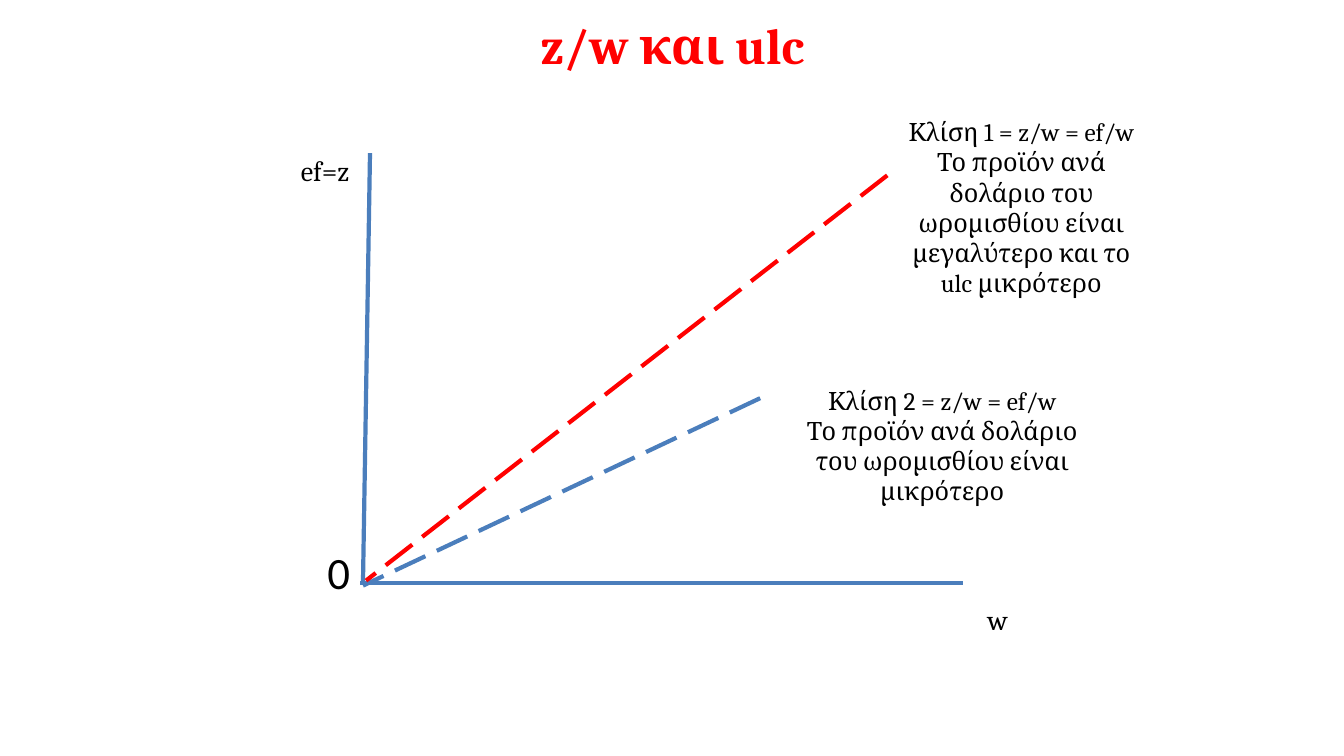
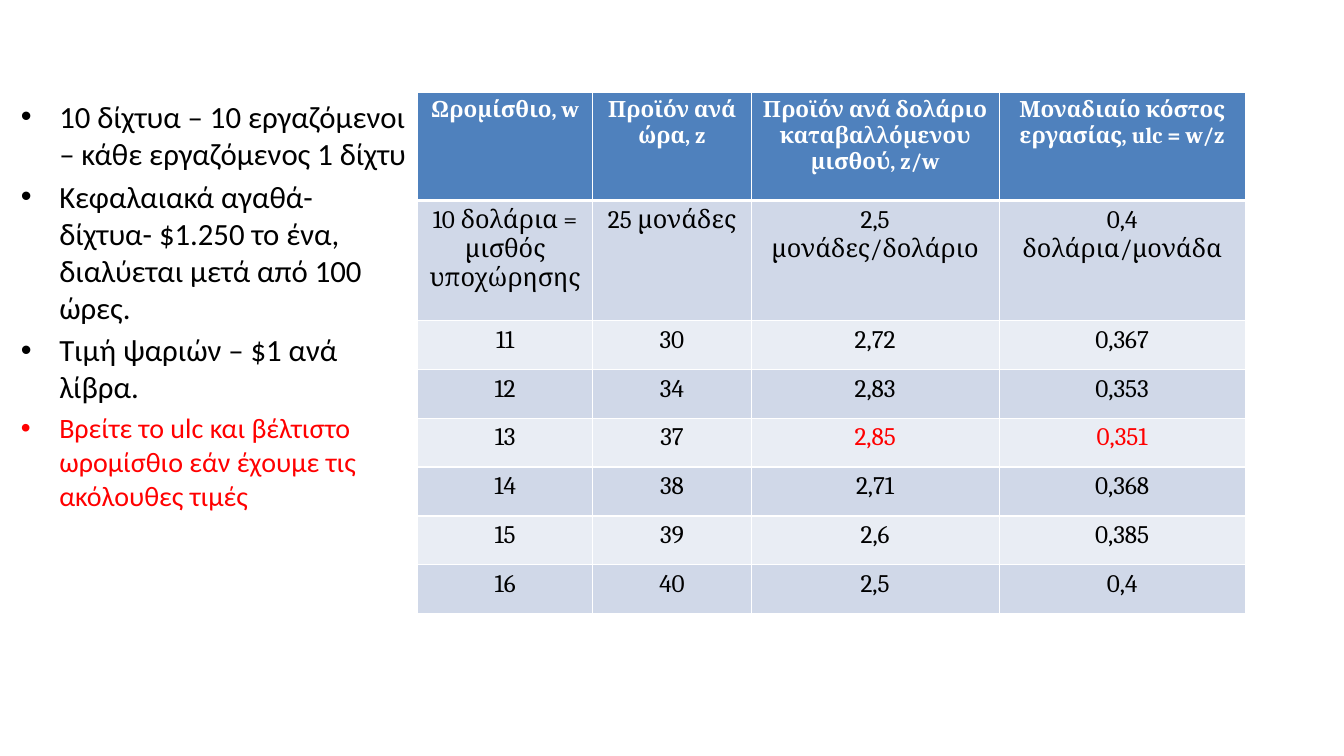
import pptx
import pptx.dml.color
import pptx.enum.dml
import pptx.enum.shapes
import pptx.enum.text
import pptx.oxml
import pptx.oxml.ns
import pptx.util

Inches = pptx.util.Inches
Pt = pptx.util.Pt
CENTER = pptx.enum.text.PP_ALIGN.CENTER
LEFT = pptx.enum.text.PP_ALIGN.LEFT
MIDDLE = pptx.enum.text.MSO_ANCHOR.MIDDLE
TOP = pptx.enum.text.MSO_ANCHOR.TOP
DASH = pptx.enum.dml.MSO_LINE.LONG_DASH
NAMESPACE = pptx.oxml.ns.nsdecls("a")

BLACK, WHITE, RED = "000000", "FFFFFF", "FF0000"
AXIS_BLUE, HEADER_BLUE = "4B7EBC", "4F81BD"
BANDS = ("D0D8E8", "E9EDF4")

TITLE = {"name": "Cambria", "size": Pt(36), "bold": True, "color": RED}
AXIS = {"name": "Cambria", "size": Pt(20), "color": BLACK}
ORIGIN = {"name": "Calibri", "size": Pt(32), "color": BLACK}
NOTE = {"name": "Cambria", "size": Pt(18), "color": BLACK}
HEADER = {"name": "Cambria", "size": Pt(16), "bold": True, "color": WHITE}
CELL = {**NOTE, "bold": False}
BULLET = {"name": "Calibri", "size": Pt(22), "color": BLACK}
TASK = {**BULLET, "size": Pt(20), "color": RED}

HEADINGS = [
    ((2.17, 0.13, 9, 0.63), "z/w και ulc", TITLE),
    ((3.1, 5.37, 0.52, 0.6), "0", ORIGIN),
]

LABELS = [
    ((2.81, 1.52, 0.83, 0.34), ["ef=z"], AXIS),
    ((9.58, 5.95, 0.63, 0.39), ["w"], AXIS),
    ((8.87, 1.15, 2.52, 1.81), [
        "Κλίση 1 = z/w = ef/w",
        "Το προϊόν ανά δολάριο του ωρομισθίου είναι μεγαλύτερο και το ulc μικρότερο",
    ], NOTE),
    ((7.85, 3.83, 2.99, 1.18), [
        "Κλίση 2 = z/w = ef/w",
        "Το προϊόν ανά δολάριο του ωρομισθίου είναι μικρότερο",
    ], NOTE),
]

LINES = [
    ((3.67, 1.52), (3.6, 5.78), AXIS_BLUE, None),
    ((9.55, 5.78), (3.57, 5.78), AXIS_BLUE, None),
    ((7.54, 3.95), (3.6, 5.81), AXIS_BLUE, DASH),
    ((8.8, 1.74), (3.63, 5.76), RED, DASH),
]

BULLETS = [
    ("10 δίχτυα – 10 εργαζόμενοι – κάθε εργαζόμενος 1 δίχτυ", BULLET),
    ("Κεφαλαιακά αγαθά- δίχτυα- $1.250 το ένα, διαλύεται μετά από 100 ώρες.", BULLET),
    ("Τιμή ψαριών – $1 ανά λίβρα.", BULLET),
    ("Βρείτε το ulc και βέλτιστο ωρομίσθιο εάν έχουμε τις ακόλουθες τιμές", TASK),
]

COLUMNS = [1.74, 1.57, 2.46, 2.44]
HEIGHTS = [1.07, 1.19] + [2.91 / 6] * 6
ROWS = [
    ["Ωρομίσθιο, w", "Προϊόν ανά ώρα, z",
     "Προϊόν ανά δολάριο καταβαλλόμενου μισθού, z/w",
     "Μοναδιαίο κόστος εργασίας, ulc = w/z"],
    ["10 δολάρια = μισθός υποχώρησης", "25 μονάδες",
     "2,5 μονάδες/δολάριο", "0,4 δολάρια/μονάδα"],
    ["11", "30", "2,72", "0,367"],
    ["12", "34", "2,83", "0,353"],
    ["13", "37", "2,85", "0,351"],
    ["14", "38", "2,71", "0,368"],
    ["15", "39", "2,6", "0,385"],
    ["16", "40", "2,5", "0,4"],
]
BEST_VALUES = {"2,85", "0,351"}


def color(value):
    return pptx.dml.color.RGBColor.from_string(value)


def apply_format(font, values):
    for name, value in values.items():
        if name == "color":
            font.color.rgb = color(value)
        else:
            setattr(font, name, value)


def add_span(para, text, values, align=CENTER):
    para.alignment = align
    span = para.add_run()
    span.text = text
    apply_format(span.font, values)


def add_paragraphs(frame, count):
    return [frame.paragraphs[0]] + [frame.add_paragraph() for _ in range(count - 1)]


def add_box(page, place, anchor):
    frame = page.shapes.add_textbox(*map(Inches, place)).text_frame
    frame.word_wrap = True
    frame.vertical_anchor = anchor
    return frame


def add_heading(page, place, text, values):
    frame = add_box(page, place, MIDDLE)
    add_span(frame.paragraphs[0], text, values)


def add_label(page, place, texts, values):
    label = page.shapes.add_shape(
        pptx.enum.shapes.MSO_SHAPE.RECTANGLE, *map(Inches, place))
    label.shadow.inherit = False
    label.fill.solid()
    label.fill.fore_color.rgb = color(WHITE)
    label.line.fill.background()
    frame = label.text_frame
    frame.word_wrap = True
    frame.vertical_anchor = MIDDLE
    for para, text in zip(add_paragraphs(frame, len(texts)), texts):
        add_span(para, text, values)


def add_line(page, start, end, line_color, dash):
    line = page.shapes.add_connector(
        pptx.enum.shapes.MSO_CONNECTOR.STRAIGHT, *map(Inches, start + end))
    line.line.color.rgb = color(line_color)
    line.line.width = Pt(3)
    if dash:
        line.line.dash_style = dash
    line._element.spPr.append(pptx.oxml.parse_xml(f"<a:effectLst {NAMESPACE}/>"))


def add_bullets(page, place, items):
    frame = add_box(page, place, TOP)
    paras = add_paragraphs(frame, len(items))
    for para, (text, values) in zip(paras, items):
        properties = para._p.get_or_add_pPr()
        properties.set("marL", str(Inches(0.38)))
        properties.set("indent", str(-Inches(0.38)))
        for tag in ('buFont %s typeface="Arial"', 'buChar %s char="•"'):
            properties.append(pptx.oxml.parse_xml(f"<a:{tag % NAMESPACE}/>"))
        add_span(para, text, values, LEFT)
    for para in paras[1:]:
        para.space_before = Pt(4.2)


def add_borders(cell, bottom_width):
    properties = cell._tc.get_or_add_tcPr()
    widths = {"lnL": 1, "lnR": 1, "lnT": 1, "lnB": bottom_width}
    for index, (tag, width) in enumerate(widths.items()):
        properties.insert(index, pptx.oxml.parse_xml(
            f'<a:{tag} {NAMESPACE} w="{Pt(width)}"><a:solidFill>'
            f'<a:srgbClr val="{WHITE}"/></a:solidFill></a:{tag}>'))


def add_wage_table(page, left, top):
    table = page.shapes.add_table(
        len(ROWS), len(COLUMNS), Inches(left), Inches(top),
        Inches(sum(COLUMNS)), Inches(sum(HEIGHTS))).table
    for column, width in zip(table.columns, COLUMNS):
        column.width = Inches(width)
    for row, height in zip(table.rows, HEIGHTS):
        row.height = Inches(height)
    for row_index, texts in enumerate(ROWS):
        is_header = row_index == 0
        fill = HEADER_BLUE if is_header else BANDS[(row_index - 1) % 2]
        for column_index, text in enumerate(texts):
            cell = table.cell(row_index, column_index)
            cell.fill.solid()
            cell.fill.fore_color.rgb = color(fill)
            if is_header:
                add_borders(cell, 3)
            values = HEADER if is_header else CELL
            if text in BEST_VALUES:
                values = {**values, "color": RED}
            add_span(cell.text_frame.paragraphs[0], text, values)


def main():
    deck = pptx.Presentation()
    deck.slide_width = Inches(13.33)
    deck.slide_height = Inches(7.5)
    blank = deck.slide_layouts[6]

    graph_page = deck.slides.add_slide(blank)
    for heading in HEADINGS:
        add_heading(graph_page, *heading)
    for line in LINES:
        add_line(graph_page, *line)
    for label in LABELS:
        add_label(graph_page, *label)

    table_page = deck.slides.add_slide(blank)
    add_bullets(table_page, (0.11, 0.92, 4.03, 6.09), BULLETS)
    add_wage_table(table_page, 4.14, 0.92)

    deck.save("out.pptx")


if __name__ == "__main__":
    main()
